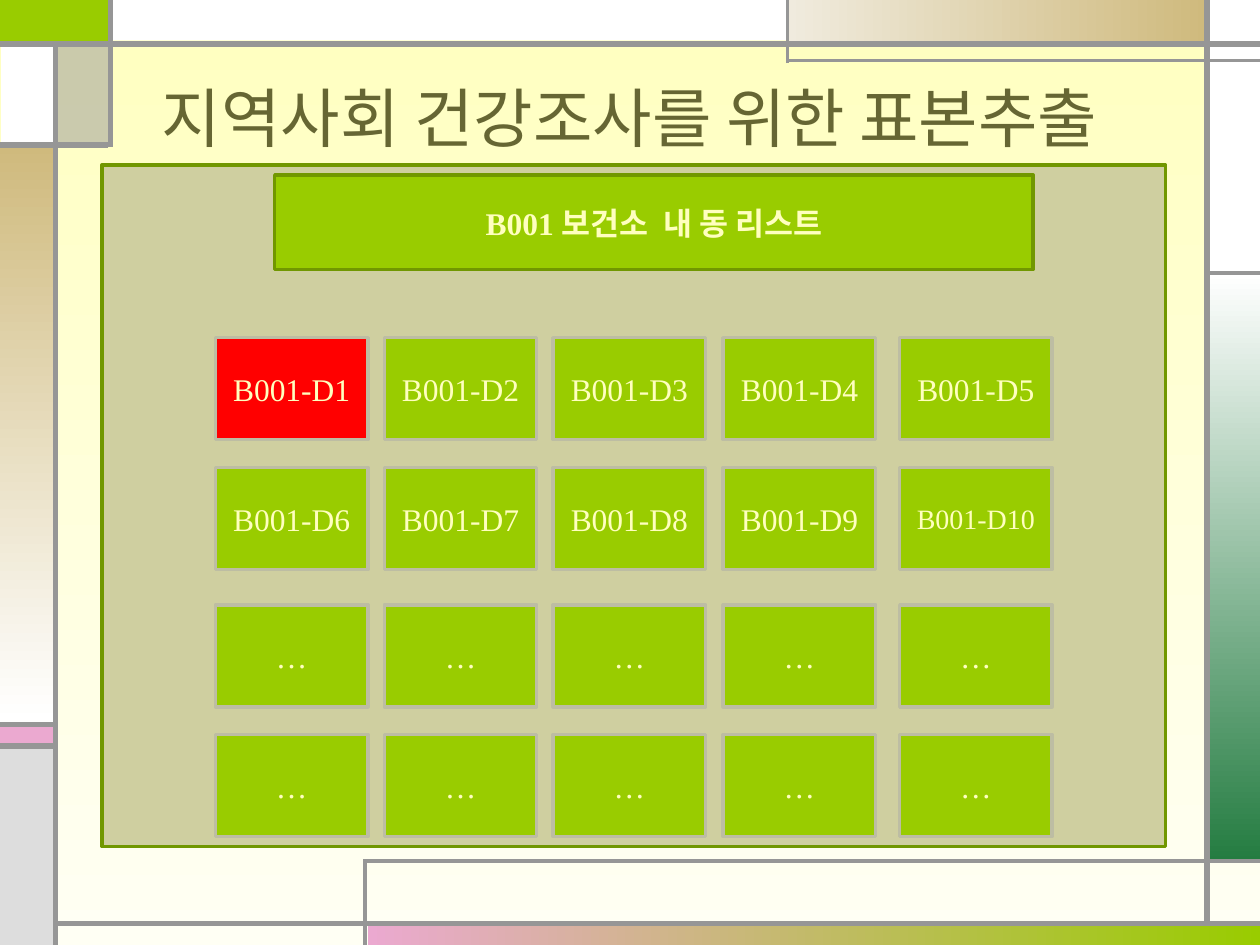
from lxml import etree
from pptx import Presentation
from pptx.dml.color import RGBColor as RGB
from pptx.enum.shapes import MSO_CONNECTOR as CONN, MSO_SHAPE as SHAPE
from pptx.enum.text import MSO_ANCHOR as ANCHOR, MSO_AUTO_SIZE as AUTO, PP_ALIGN as ALIGN
from pptx.oxml.ns import qn
from pptx.util import Inches, Pt

COLORS = {
    "cream": "FFFFBF", "ivory": "FFFFF4", "green": "99CC00", "forest": "247C41",
    "pink": "EBA9D0", "white": "FFFFFF", "silver": "DDDDDD", "gray": "969696",
    "sand": "F0EBDE", "tan": "CFBA7D", "panel": "CFCFA0", "edge": "719700",
    "cell_edge": "BDBDA3", "red": "FF0000", "olive": "666633",
}
FONT = "Times New Roman"
ACROSS, DOWN = 0, 270

FRAME_BLOCKS = [
    (0, 0, 0.87, 0.34, "green"),
    (2.92, 7.33, 7.08, 0.17, ("pink", "green", ACROSS)),
    (9.58, 2.17, 0.42, 4.67, ("white", "forest", DOWN)),
    (0, 5.75, 0.42, 0.17, "pink"),
    (0, 5.93, 0.42, 1.57, "silver"),
    (9.58, 0, 0.42, 2.17, "white"),
    (6.25, 0, 3.33, 0.33, ("sand", "tan", ACROSS)),
    (0.46, 0.33, 0.42, 0.82, "gray"),
    (0, 1.15, 0.42, 4.58, ("tan", "white", DOWN)),
    (0.01, 0.33, 0.42, 0.82, "white"),
    (0.86, 0, 5.39, 0.32, "white"),
]
FRAME_LINES = [
    (0.44, 7.5, 0.44, 0.33, 3),
    (0.44, 7.33, 10, 7.33, 3),
    (9.58, 7.33, 9.58, 0, 3),
    (0, 0.35, 10, 0.35, 3),
    (10, 0.48, 6.25, 0.48, 2.25),
    (6.25, 0.5, 6.25, 0, 2.25),
    (9.58, 2.17, 10, 2.17, 2.25),
    (0.88, 0, 0.88, 1.17, 3),
    (0.86, 1.15, 0, 1.15, 3),
    (2.9, 7.5, 2.9, 6.82, 2.25),
    (2.89, 6.83, 10, 6.83, 2.25),
    (0.46, 5.75, 0, 5.75, 3),
    (0.46, 5.92, 0, 5.92, 3),
]
DISTRICTS = [f"B001-D{n}" for n in range(1, 11)] + ["…"] * 10
COLUMN_LEFTS = [0, 1.34, 2.68, 4.03, 5.43]
ROW_TOPS = [0, 1.03, 2.12, 3.15]


def rgb(name):
    return RGB.from_string(COLORS[name])


def set_fill(fill, paint):
    if isinstance(paint, str):
        fill.solid()
        fill.fore_color.rgb = rgb(paint)
        return
    *names, angle = paint
    fill.gradient()
    fill.gradient_angle = angle
    for stop, name in zip(fill.gradient_stops, names):
        stop.color.rgb = rgb(name)


def add_rect(shapes, box, paint, edge=None):
    sp = shapes.add_shape(SHAPE.RECTANGLE, *map(Inches, box))
    sp.shadow.inherit = False
    set_fill(sp.fill, paint)
    if edge:
        sp.line.color.rgb = rgb(edge)
        sp.line.width = Pt(2)
    else:
        sp.line.fill.background()
    return sp


def add_line(shapes, start, end, width):
    line = shapes.add_connector(CONN.STRAIGHT, *map(Inches, start + end))
    line.line.color.rgb = rgb("gray")
    line.line.width = Pt(width)
    etree.SubElement(line.element.spPr, qn("a:effectLst"))


def set_text(sp, text, color="cream", **formats):
    tf = sp.text_frame
    tf.word_wrap = True
    tf.auto_size = AUTO.NONE
    tf.vertical_anchor = ANCHOR.MIDDLE
    p = tf.paragraphs[0]
    p.alignment = ALIGN.CENTER
    r = p.add_run()
    r.text = text
    for name, value in ({"name": FONT, "size": Pt(18)} | formats).items():
        setattr(r.font, name, value)
    r.font.color.rgb = rgb(color)


def add_frame(s, box):
    left, top = box[:2]
    shapes = s.shapes.add_group_shape().shapes
    for x, y, w, h, paint in FRAME_BLOCKS:
        sp = add_rect(shapes, (left + x, top + y, w, h), paint)
        if paint == "gray":
            color = sp.element.spPr.find(".//" + qn("a:srgbClr"))
            etree.SubElement(color, qn("a:alpha"), val="50000")
    for x1, y1, x2, y2, width in FRAME_LINES:
        add_line(shapes, (left + x1, top + y1), (left + x2, top + y2), width)


def add_title(s, box):
    title = s.shapes.title
    for name, value in zip(("left", "top", "width", "height"), box):
        setattr(title, name, Inches(value))
    set_text(title, "지역사회 건강조사를 위한 표본추출", "olive", size=Pt(36.9))
    title.element.getparent().append(title.element)


def add_district_grid(shapes, box):
    left, top, width, height = box
    w, h = width - COLUMN_LEFTS[-1], height - ROW_TOPS[-1]
    for i, name in enumerate(DISTRICTS):
        row, col = divmod(i, len(COLUMN_LEFTS))
        cell = (left + COLUMN_LEFTS[col], top + ROW_TOPS[row], w, h)
        sp = add_rect(shapes, cell, "green" if i else "red", "cell_edge")
        set_text(sp, name, size=Pt(16 if len(name) > 7 else 18))


def add_sampling_panel(s, box):
    left, top = box[:2]
    add_rect(s.shapes, box, "panel", "edge")
    shapes = s.shapes.add_group_shape().shapes
    add_district_grid(shapes, (left + 0.9, top + 1.37, 6.64, 3.96))
    header = add_rect(shapes, (left + 1.37, top + 0.08, 6.02, 0.75), "green", "edge")
    set_text(header, "B001 보건소  내 동 리스트", bold=True)


def main():
    prs = Presentation()
    prs.slide_width, prs.slide_height = Inches(10), Inches(7.5)
    s = prs.slides.add_slide(prs.slide_layouts[5])
    set_fill(s.background.fill, ("cream", "ivory", DOWN))
    add_frame(s, (0, 0, 10, 7.5))
    add_sampling_panel(s, (0.81, 1.31, 8.44, 5.41))
    add_title(s, (0.5, 0.3, 9, 1.25))
    prs.save("out.pptx")


if __name__ == "__main__":
    main()
